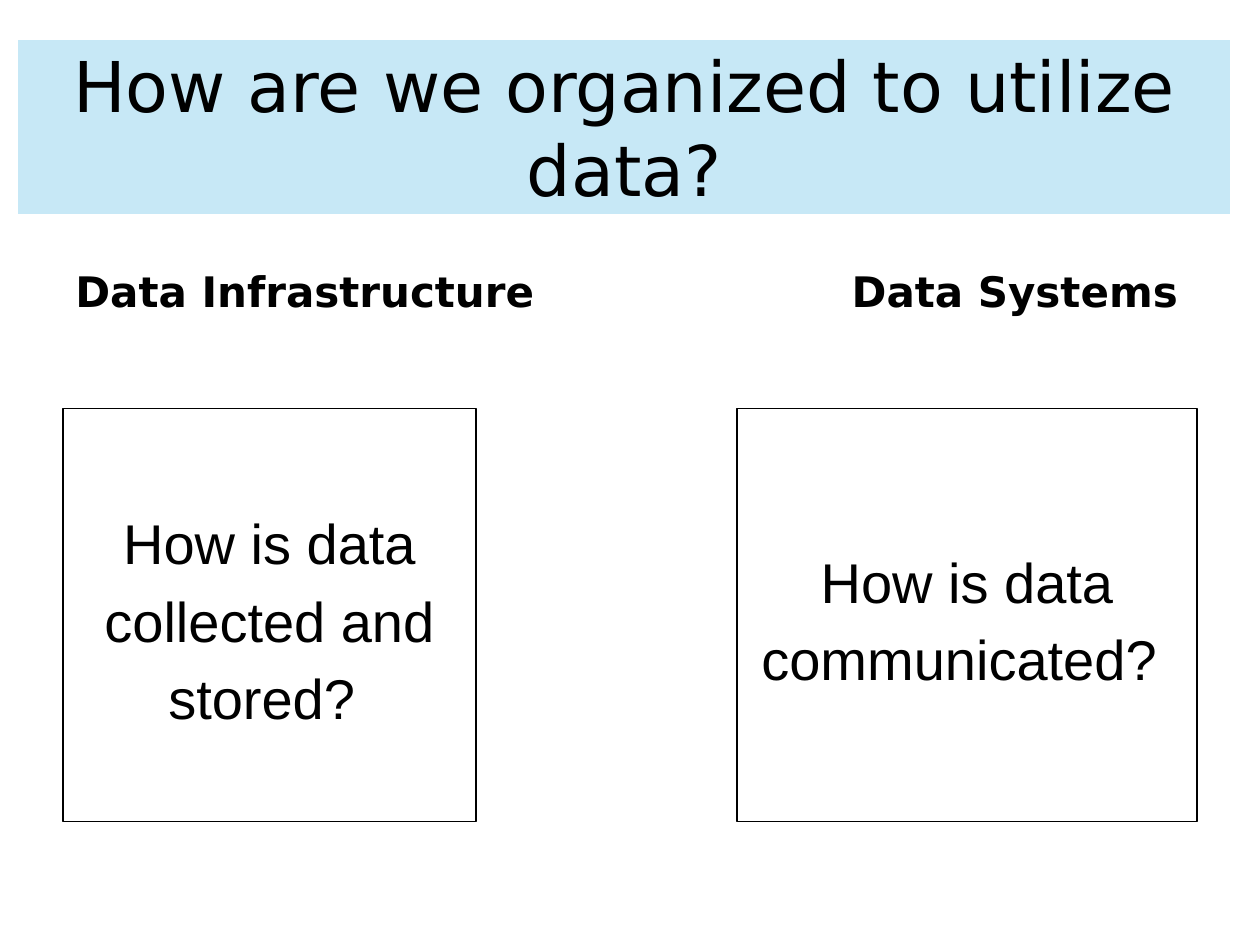
from lxml.etree import SubElement
from pptx import Presentation
from pptx.dml.color import RGBColor
from pptx.enum.shapes import MSO_SHAPE
from pptx.enum.text import MSO_ANCHOR, PP_ALIGN
from pptx.oxml.ns import qn
from pptx.util import Cm, Pt

COLORS = {"text": "000000", "paper": "FFFFFF", "banner": "A9DCF2"}
HEAD_FONT, BODY_FONT = "DejaVu Sans", "Arial"
INSET = 0.25

TITLE = "How are we organized to utilize data?"
HEADINGS = ["Data Infrastructure", "Data Systems"]
HEADING_TAB = 15.65

LEFT, RIGHT = 1.27, 24.13
BOX_TOP, BOX_HEIGHT = 8.23, 8.33
QUESTIONS = [
    ("How is data collected and stored? ", LEFT, 8.33),
    ("How is data communicated? ", RIGHT - 9.27, 9.27),
]


def color(name):
    return RGBColor.from_string(COLORS[name])


def write(sp, text, size, font, align, anchor, spacing=1.0, bold=False):
    tf = sp.text_frame
    tf.word_wrap = True
    tf.vertical_anchor = anchor
    tf.margin_left = tf.margin_right = tf.margin_top = tf.margin_bottom = Cm(INSET)
    p = tf.paragraphs[0]
    p.alignment = align
    p.line_spacing = spacing
    r = p.add_run()
    r.text = text
    r.font.size = Pt(size)
    r.font.name = font
    r.font.bold = bold
    r.font.color.rgb = color("text")
    return p


def add_box(s, left, top, width, height, fill, line, line_width):
    sp = s.shapes.add_shape(
        MSO_SHAPE.RECTANGLE, Cm(left), Cm(top), Cm(width), Cm(height))
    sp.shadow.inherit = False
    sp.fill.solid()
    sp.fill.fore_color.rgb = color(fill)
    sp.line.color.rgb = color(line)
    sp.line.width = Pt(line_width)
    return sp


def set_opacity(sp, percent):
    fill = sp.element.spPr.find(qn("a:solidFill"))
    SubElement(fill[0], qn("a:alpha"), val=str(percent * 1000))


def add_tab_stop(p, position):
    tabs = SubElement(p._p.get_or_add_pPr(), qn("a:tabLst"))
    SubElement(tabs, qn("a:tab"), pos=str(Cm(position)), algn="l")


def main():
    prs = Presentation()
    prs.slide_width, prs.slide_height = Cm(25.4), Cm(19.05)
    s = prs.slides.add_slide(prs.slide_layouts[6])

    banner = add_box(s, 0.33, 0.77, 24.51, 3.58, "banner", "paper", 2.25)
    set_opacity(banner, 65)
    write(banner, TITLE, 40, HEAD_FONT, PP_ALIGN.CENTER, MSO_ANCHOR.MIDDLE)

    headings = s.shapes.add_textbox(Cm(LEFT), Cm(4.95), Cm(RIGHT - LEFT), Cm(2.39))
    p = write(headings, "\t".join(HEADINGS), 24, HEAD_FONT,
              PP_ALIGN.LEFT, MSO_ANCHOR.TOP, 1.15, True)
    add_tab_stop(p, HEADING_TAB)

    for question, left, width in QUESTIONS:
        box = add_box(s, left, BOX_TOP, width, BOX_HEIGHT, "paper", "text", 0.75)
        write(box, question, 32, BODY_FONT,
              PP_ALIGN.CENTER, MSO_ANCHOR.MIDDLE, 1.15)

    prs.save("out.pptx")


if __name__ == "__main__":
    main()
